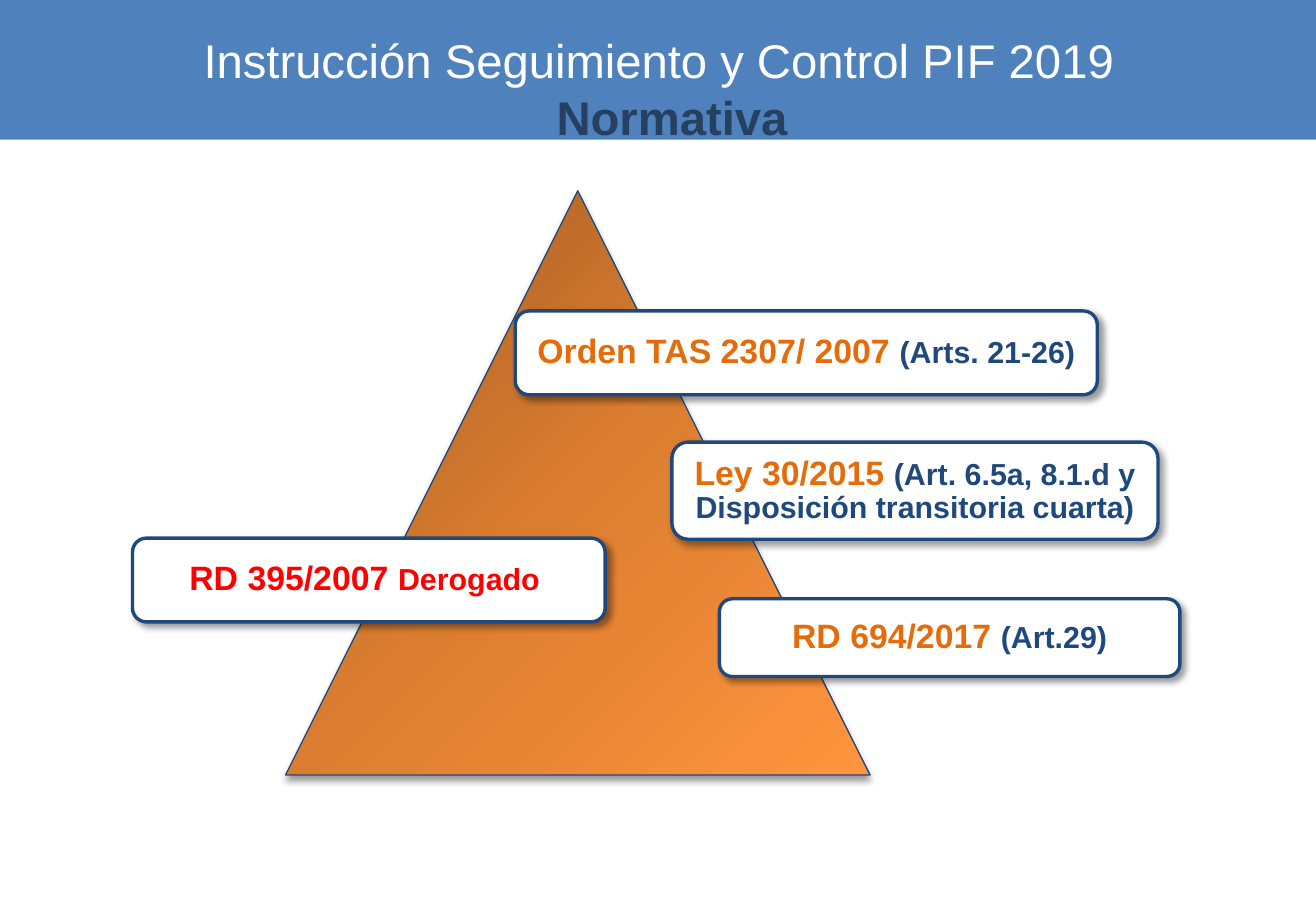
"""Builds the slide on the legal framework for PIF 2019 monitoring and control."""
from copy import deepcopy

from pptx import Presentation
from pptx.dml.color import RGBColor
from pptx.enum.shapes import MSO_SHAPE
from pptx.enum.text import MSO_ANCHOR, MSO_AUTO_SIZE, PP_ALIGN
from pptx.oxml import parse_xml
from pptx.oxml.ns import nsdecls, qn
from pptx.util import Inches, Pt

RECTANGLE, TRIANGLE, ROUNDED = MSO_SHAPE.RECTANGLE, MSO_SHAPE.ISOSCELES_TRIANGLE, MSO_SHAPE.ROUNDED_RECTANGLE
TOP, MIDDLE = MSO_ANCHOR.TOP, MSO_ANCHOR.MIDDLE
CENTER = PP_ALIGN.CENTER
NO_AUTOFIT = MSO_AUTO_SIZE.NONE

THEME = {
    "font": "Arial",
    "title": Pt(28), "law": Pt(20), "detail": Pt(18),
    "band": RGBColor.from_string("4F81BD"),
    "white": RGBColor.from_string("FFFFFF"),
    "subject": RGBColor.from_string("254061"),
    "navy": RGBColor.from_string("1F497D"),
    "orange": RGBColor.from_string("E46C0A"),
    "red": RGBColor.from_string("FF0000"),
    "gradient": [(0, "9A5822"), (0.5, "DB7D30"), (1, "FF953E")],
}


def add_span(para, text, size, color, bold):
    """Add a run of formatted text to a paragraph."""
    span = para.add_run()
    span.text = text
    span.font.color.rgb = THEME[color]
    for name, value in {"name": THEME["font"], "size": THEME[size], "bold": bold}.items():
        setattr(span.font, name, value)


def add_box(page, kind, place, line_width, shadow_angle):
    """Add an outlined preset shape with a soft shadow."""
    box = page.shapes.add_shape(kind, *map(Inches, place))
    box.line.color.rgb = THEME["navy"]
    box.line.width = Pt(line_width)
    box.shadow.inherit = False
    box._element.spPr.find(qn("a:effectLst")).append(parse_xml(
        f'<a:outerShdw {nsdecls("a")} blurRad="{Pt(4)}" dist="{Pt(3)}" '
        f'dir="{shadow_angle * 60000}" rotWithShape="0">'
        '<a:srgbClr val="000000"><a:alpha val="40000"/></a:srgbClr></a:outerShdw>'))
    return box


deck = Presentation()
deck.slide_width, deck.slide_height = Inches(10.83), Inches(7.5)
page = deck.slides.add_slide(deck.slide_layouts[5])

band = page.shapes.add_shape(RECTANGLE, 0, 0, deck.slide_width, Inches(1.15))
band.fill.solid()
band.fill.fore_color.rgb = THEME["band"]
band.line.fill.background()
band.shadow.inherit = False
page.shapes._spTree.insert(2, band._element)

title = page.shapes.title
title_place = {"left": 1.32, "top": 0.21, "width": 8.42, "height": 1.04}
for name, value in title_place.items():
    setattr(title, name, Inches(value))
frame = title.text_frame
frame_format = {"word_wrap": True, "auto_size": NO_AUTOFIT, "vertical_anchor": TOP,
                "margin_right": Inches(0.32)}
for name, value in frame_format.items():
    setattr(frame, name, value)
heading, subject = frame.paragraphs[0], frame.add_paragraph()
subject._p.get_or_add_pPr().set("marL", str(Inches(0.22)))
heading.alignment = subject.alignment = CENTER
add_span(heading, "Instrucción Seguimiento y Control PIF 2019", "title", "white", False)
add_span(subject, "Normativa", "title", "subject", True)

pyramid = add_box(page, TRIANGLE, (2.35, 1.57, 4.81, 4.81), 0.75, 90)
pyramid.fill.gradient()
pyramid.fill.gradient_angle = 315
stop_list = pyramid._element.spPr.find(".//" + qn("a:gsLst"))
stop_list.append(deepcopy(stop_list[1]))
for stop, (position, color) in zip(pyramid.fill.gradient_stops, THEME["gradient"]):
    stop.position = position
    stop.color.rgb = RGBColor.from_string(color)

laws = [
    ((4.24, 2.56, 4.79, 0.69), "Orden TAS 2307/ 2007 ", "orange", "(Arts. 21-26)", "navy"),
    ((5.53, 3.64, 4, 0.8), "Ley 30/2015 ", "orange",
     "(Art. 6.5a, 8.1.d y Disposición transitoria cuarta)", "navy"),
    ((5.92, 4.93, 3.79, 0.64), "RD 694/2017 ", "orange", "(Art.29)", "navy"),
    ((1.09, 4.43, 3.89, 0.69), "RD 395/2007 ", "red", "Derogado ", "red"),
]
law_format = {"word_wrap": True, "vertical_anchor": MIDDLE}
law_format |= {f"margin_{side}": Inches(0.08) for side in ("left", "top", "right", "bottom")}
for place, law, law_color, detail, detail_color in laws:
    box = add_box(page, ROUNDED, place, 2, 45)
    box.fill.solid()
    box.fill.fore_color.rgb = THEME["white"]
    for name, value in law_format.items():
        setattr(box.text_frame, name, value)
    para = box.text_frame.paragraphs[0]
    para.alignment = CENTER
    para.line_spacing = 0.9
    add_span(para, law, "law", law_color, True)
    add_span(para, detail, "detail", detail_color, True)

deck.save("out.pptx")
